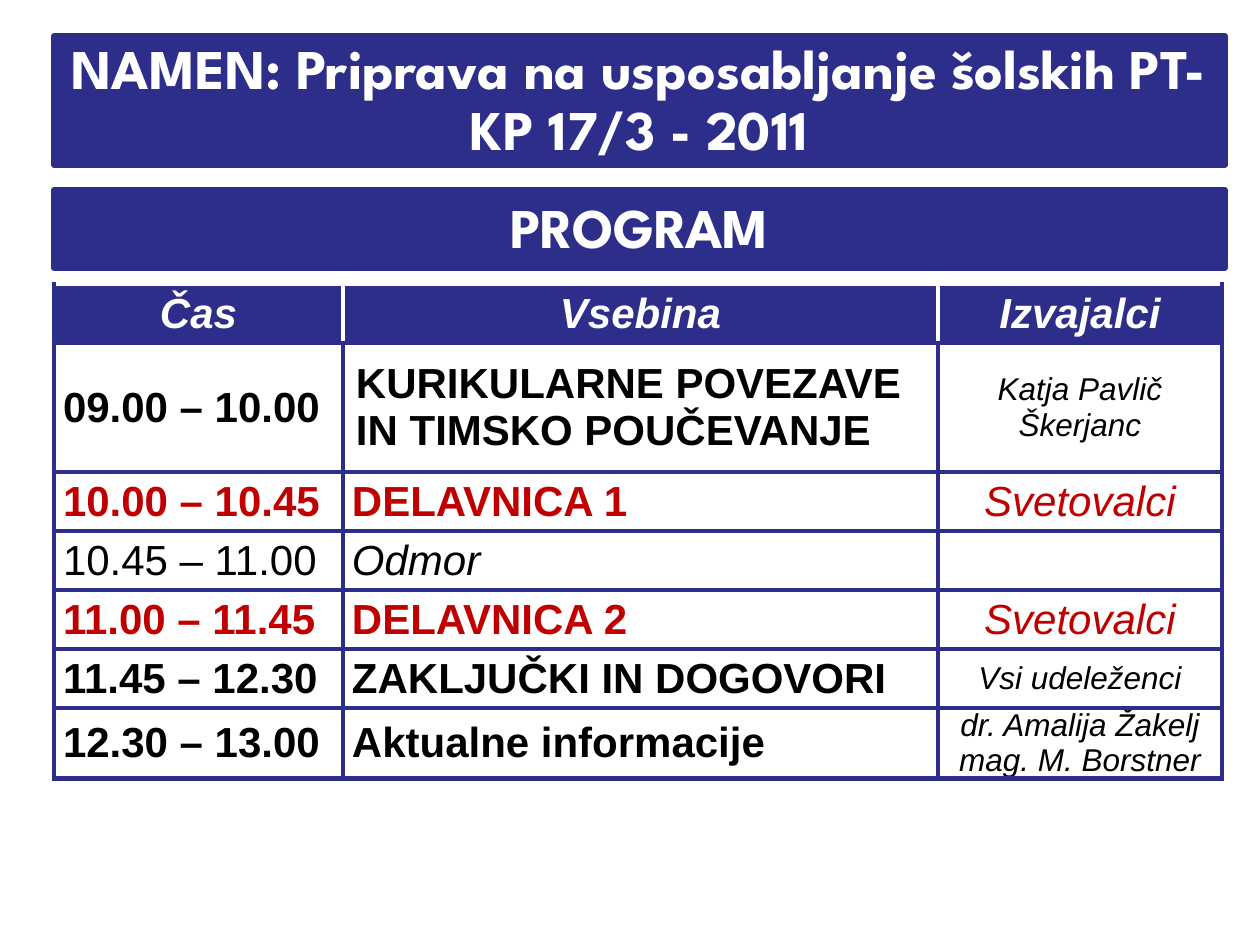
import pptx
import pptx.util
import pptx.dml.color
import pptx.enum.shapes
import pptx.enum.text
import pptx.oxml
import pptx.oxml.ns

SCALE = 914400 / 126
NAVY, WHITE, BLACK, RED = "2D2D8A", "FFFFFF", "000000", "C00000"
LEFT, WIDTH = 54, 1171
COLS = (289, 595, 284)
ROWS = (59, 129, 59, 59, 59, 59, 59)
HEADS = ("Čas", "Vsebina", "Izvajalci")
# time, content, hosts, colour, (bold, italic) of time, of content, host size
PLAN = (
    ("09.00 – 10.00", "KURIKULARNE POVEZAVE IN TIMSKO POUČEVANJE",
     ("Katja Pavlič Škerjanc",), BLACK, (True, False), (True, False), 18),
    ("10.00 – 10.45", "DELAVNICA 1", ("Svetovalci",),
     RED, (True, False), (True, False), 24),
    ("10.45 – 11.00", "Odmor", (),
     BLACK, (False, False), (False, True), 24),
    ("11.00 – 11.45", "DELAVNICA 2", ("Svetovalci",),
     RED, (True, False), (True, False), 24),
    ("11.45 – 12.30", "ZAKLJUČKI IN DOGOVORI", ("Vsi udeleženci",),
     BLACK, (True, False), (True, False), 18),
    ("12.30 – 13.00", "Aktualne informacije",
     ("dr. Amalija Žakelj", "mag. M. Borstner"),
     BLACK, (True, False), (True, False), 18),
)


def px(num):
    return pptx.util.Emu(round(num * SCALE))


def rgb(code):
    return pptx.dml.color.RGBColor.from_string(code)


class Deck:
    """Holds the presentation, its fonts and the current slide."""
    head, body = "League Spartan", "Arial"
    mid = pptx.enum.text.PP_ALIGN.CENTER
    start = pptx.enum.text.PP_ALIGN.LEFT

    def __init__(self):
        self.show = pptx.Presentation()
        self.show.slide_width, self.show.slide_height = px(1260), px(945)
        self.slide = self.show.slides.add_slide(self.show.slide_layouts[5])

    def add_text(self, par, text, font, size, color, bold, slant):
        run = par.add_run()
        run.text = text
        run.font.name, run.font.size = font, pptx.util.Pt(size)
        run.font.bold, run.font.italic = bold, slant
        run.font.color.rgb = rgb(color)

    def banner(self, shape, text):
        """Turn a shape into a navy band with one centred heading."""
        shape.fill.solid()
        shape.fill.fore_color.rgb = rgb(NAVY)
        shape.line.color.rgb = rgb(NAVY)
        shape.line.width = pptx.util.Pt(3)
        frame = shape.text_frame
        frame.word_wrap = True
        frame.auto_size = pptx.enum.text.MSO_AUTO_SIZE.NONE
        frame.vertical_anchor = pptx.enum.text.MSO_ANCHOR.MIDDLE
        par = frame.paragraphs[0]
        par.alignment = self.mid
        par.line_spacing = pptx.util.Pt(35)
        self.add_text(par, text, self.head, 32, WHITE, True, False)

    def title(self, top, high, text):
        shape = self.slide.shapes.title
        shape.left, shape.top = px(LEFT), px(top)
        shape.width, shape.height = px(WIDTH), px(high)
        self.banner(shape, text)

    def band(self, top, high, text):
        shape = self.slide.shapes.add_shape(
            pptx.enum.shapes.MSO_SHAPE.RECTANGLE,
            px(LEFT), px(top), px(WIDTH), px(high))
        shape.shadow.inherit = False
        self.banner(shape, text)

    def grid(self, top):
        table = self.slide.shapes.add_table(
            len(ROWS), len(COLS), px(LEFT), px(top),
            px(sum(COLS)), px(sum(ROWS))).table
        table.first_row = table.horz_banding = False
        for col, wide in zip(table.columns, COLS):
            col.width = px(wide)
        for row, high in zip(table.rows, ROWS):
            row.height = px(high)
        return table

    def edge(self, cell, sides):
        """Draw borders; sides are the colours of left, right, top, bottom."""
        props = cell._tc.get_or_add_tcPr()
        for spot, (side, color) in enumerate(zip("LRTB", sides)):
            props.insert(spot, pptx.oxml.parse_xml(
                f'<a:ln{side} {pptx.oxml.ns.nsdecls("a")} w="38100">'
                f'<a:solidFill><a:srgbClr val="{color}"/></a:solidFill>'
                f'</a:ln{side}>'))

    def cell(self, cell, lines, fill, sides, align, look, pad=9):
        """Fill a cell; look is size, colour, bold, italic."""
        cell.fill.solid()
        cell.fill.fore_color.rgb = rgb(fill)
        self.edge(cell, sides)
        cell.vertical_anchor = pptx.enum.text.MSO_ANCHOR.MIDDLE
        cell.margin_left = cell.margin_right = px(pad)
        cell.margin_top = cell.margin_bottom = 0
        frame = cell.text_frame
        for num, text in enumerate(lines):
            par = frame.add_paragraph() if num else frame.paragraphs[0]
            par.alignment = align
            self.add_text(par, text, self.body, *look)


def main():
    deck = Deck()
    deck.title(36, 129, "NAMEN: Priprava na usposabljanje šolskih PT-KP 17/3 - 2011")
    table = deck.grid(284)
    last = len(COLS) - 1
    for col, text in enumerate(HEADS):
        sides = (WHITE if col else NAVY, WHITE if col < last else NAVY,
                 WHITE, NAVY)
        deck.cell(table.cell(0, col), (text,), NAVY, sides, deck.mid,
                  (24, WHITE, True, True))
    frame = (NAVY,) * 4
    for row, (time, topic, hosts, color, when, what, size) in enumerate(PLAN, 1):
        deck.cell(table.cell(row, 0), (time,), WHITE, frame, deck.start,
                  (24, color, *when))
        deck.cell(table.cell(row, 1), (topic,), WHITE, frame, deck.start,
                  (24, color, *what), 13 if row == 1 else 9)
        deck.cell(table.cell(row, 2), hosts, WHITE, frame, deck.mid,
                  (size, color, False, True))
    deck.band(190, 78, "PROGRAM")
    deck.show.save("out.pptx")


if __name__ == "__main__":
    main()
